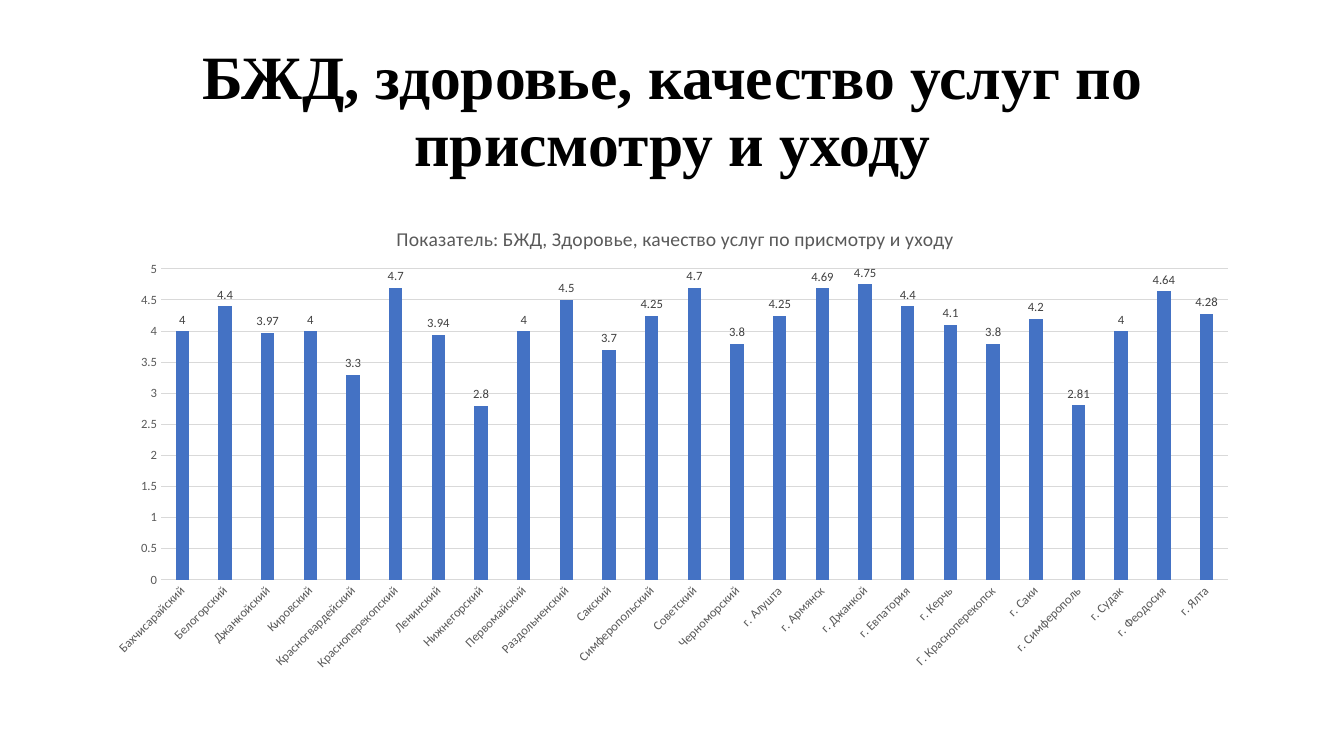
import pptx
import pptx.chart.data
import pptx.dml.color
import pptx.enum.chart
import pptx.enum.text
import pptx.oxml
import pptx.oxml.ns
import pptx.util

HEADING = "БЖД, здоровье, качество услуг по присмотру и уходу"
CHART_TITLE = "Показатель: БЖД, Здоровье, качество услуг по присмотру и уходу"
SCORES = {
    "Бахчисарайский": 4, "Белогорский": 4.4, "Джанкойский": 3.97,
    "Кировский": 4, "Красногвардейский": 3.3, "Красноперекопский": 4.7,
    "Ленинский": 3.94, "Нижнегорский": 2.8, "Первомайский": 4,
    "Раздольненский": 4.5, "Сакский": 3.7, "Симферопольский": 4.25,
    "Советский": 4.7, "Черноморский": 3.8, "г. Алушта": 4.25,
    "г. Армянск": 4.69, "г. Джанкой": 4.75, "г. Евпатория": 4.4,
    "г. Керчь": 4.1, "Г. Красноперекопск": 3.8, "г. Саки": 4.2,
    "г. Симферополь": 2.81, "г. Судак": 4, "г. Феодосия": 4.64,
    "г. Ялта": 4.28,
}

THEME = {
    "heading_font": "Times New Roman", "chart_font": "Calibri",
    "heading_size": 44, "title_size": 14, "label_size": 9,
    "heading": "000000", "axis": "595959", "label": "404040",
    "grid": "D9D9D9", "bar": "4472C4", "paper": "FFFFFF",
}

# left, top, width, height in px
PAGE_SIZE = (1344, 756)
HEADING_BOX = (93, 40, 1159, 146)
CHART_BOX = (93, 202, 1159, 480)
PLOT_BOX = (161, 269, 1067, 311)
TITLE_CORNER = (393, 222)


def px(length):
    return round(length * 914400 / 100.8)


def color(name):
    return pptx.dml.color.RGBColor.from_string(THEME[name])


def set_font(font, face, size, ink, bold=False):
    font.name = THEME[face]
    font.size = pptx.util.Pt(THEME[size])
    font.color.rgb = color(ink)
    font.bold = bold


def set_line(line):
    line.color.rgb = color("grid")
    line.width = pptx.util.Pt(0.75)


def place(element, index, bounds, inner=False):
    """Fix a chart part at px bounds, given as fractions of the chart box."""
    left, top, width, height = CHART_BOX
    fractions = [(bounds[0] - left) / width, (bounds[1] - top) / height]
    fractions += [side / full for side, full in zip(bounds[2:], (width, height))]
    parts = '<c:layoutTarget val="inner"/>' if inner else ""
    parts += '<c:xMode val="edge"/><c:yMode val="edge"/>'
    for tag, fraction in zip("xywh", fractions):
        parts += f'<c:{tag} val="{fraction:.4f}"/>'
    for old in element.findall(pptx.oxml.ns.qn("c:layout")):
        element.remove(old)
    element.insert(index, pptx.oxml.parse_xml(
        f'<c:layout {pptx.oxml.ns.nsdecls("c")}>'
        f'<c:manualLayout>{parts}</c:manualLayout></c:layout>'))


def add_heading(page):
    box = page.shapes.add_textbox(*map(px, HEADING_BOX))
    frame = box.text_frame
    frame.word_wrap = True
    frame.vertical_anchor = pptx.enum.text.MSO_ANCHOR.MIDDLE
    para = frame.paragraphs[0]
    para.text = HEADING
    para.alignment = pptx.enum.text.PP_ALIGN.CENTER
    para.line_spacing = 0.9
    set_font(para.font, "heading_font", "heading_size", "heading", True)


def add_score_chart(page):
    data = pptx.chart.data.CategoryChartData()
    data.categories = list(SCORES)
    data.add_series("Series 1", list(SCORES.values()))
    chart = page.shapes.add_chart(
        pptx.enum.chart.XL_CHART_TYPE.COLUMN_CLUSTERED,
        *map(px, CHART_BOX), data).chart
    set_font(chart.font, "chart_font", "label_size", "axis")
    chart.has_legend = False

    title = chart.chart_title
    para = title.text_frame.paragraphs[0]
    para.text = CHART_TITLE
    set_font(para.font, "chart_font", "title_size", "axis")

    plot = chart.plots[0]
    plot.gap_width = 219
    plot.overlap = -27
    plot.vary_by_categories = False
    bars = plot.series[0].format.fill
    bars.solid()
    bars.fore_color.rgb = color("bar")
    plot.has_data_labels = True
    labels = plot.data_labels
    labels.show_value = True
    labels.position = pptx.enum.chart.XL_LABEL_POSITION.OUTSIDE_END
    set_font(labels.font, "chart_font", "label_size", "label")

    districts, scale = chart.category_axis, chart.value_axis
    for axis in (districts, scale):
        axis.major_tick_mark = pptx.enum.chart.XL_TICK_MARK.NONE
        axis.minor_tick_mark = pptx.enum.chart.XL_TICK_MARK.NONE
        set_font(axis.tick_labels.font, "chart_font", "label_size", "axis")
    set_line(districts.format.line)
    scale.format.line.fill.background()
    set_line(scale.major_gridlines.format.line)
    scale.minimum_scale, scale.maximum_scale, scale.major_unit = 0, 5, 0.5

    space = chart.element
    slant = space.find(".//" + pptx.oxml.ns.qn("c:catAx")).find(
        ".//" + pptx.oxml.ns.qn("a:bodyPr"))
    slant.set("rot", "-2700000")
    slant.set("vert", "horz")
    place(space.find(".//" + pptx.oxml.ns.qn("c:title")), 1, TITLE_CORNER)
    place(space.find(".//" + pptx.oxml.ns.qn("c:plotArea")), 0, PLOT_BOX, True)


def main():
    deck = pptx.Presentation()
    deck.slide_width, deck.slide_height = map(px, PAGE_SIZE)
    page = deck.slides.add_slide(deck.slide_layouts[6])
    page.background.fill.solid()
    page.background.fill.fore_color.rgb = color("paper")
    add_heading(page)
    add_score_chart(page)
    deck.save("out.pptx")


if __name__ == "__main__":
    main()
